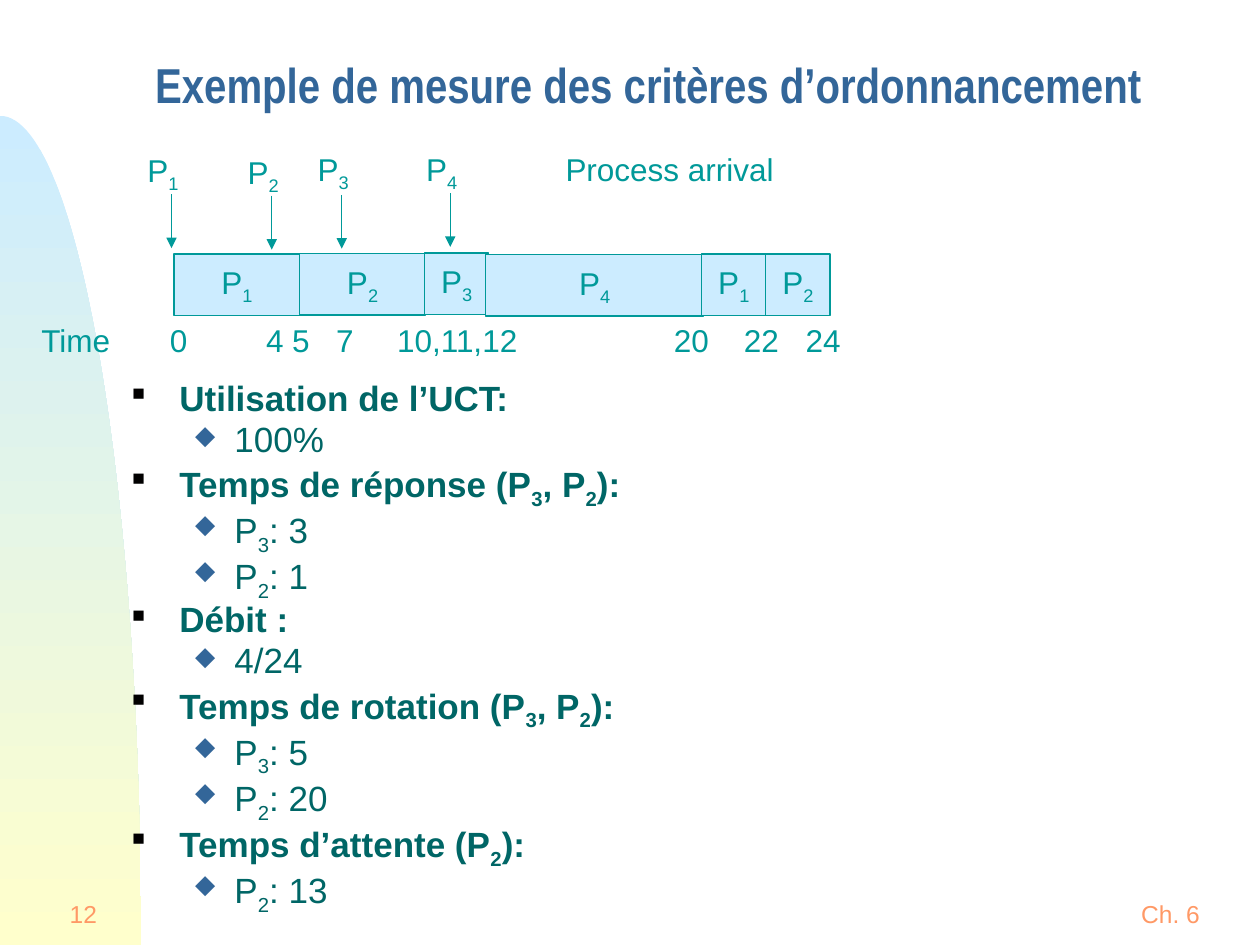
from dataclasses import dataclass

from lxml.etree import SubElement
from pptx import Presentation
from pptx.dml.color import RGBColor
from pptx.enum.shapes import MSO_CONNECTOR, MSO_SHAPE
from pptx.enum.text import MSO_ANCHOR, MSO_AUTO_SIZE, PP_ALIGN
from pptx.oxml.ns import qn
from pptx.util import Pt


@dataclass(frozen=True)
class Theme:
    font: str = "Arial"
    head: str = "Arial Narrow"
    blue: str = "336699"
    teal: str = "009999"
    dark: str = "006666"
    pale: str = "CCECFF"
    cream: str = "FFFFCC"
    coral: str = "FF9966"
    black: str = "010000"
    title: int = 28
    body: int = 20
    label: int = 18
    foot: int = 14


@dataclass(frozen=True)
class Box:
    left: float
    top: float
    width: float
    height: float

    def spot(self) -> tuple:
        return Pt(self.left), Pt(self.top), Pt(self.width), Pt(self.height)


@dataclass(frozen=True)
class Slot:
    """One stretch of processor time in the schedule."""
    name: str
    left: float
    top: float
    width: float


@dataclass(frozen=True)
class Event:
    """A process arrival: its label and the arrow below it."""
    name: str
    mid: float
    top: float
    start: float


@dataclass(frozen=True)
class Level:
    margin: float
    indent: float
    mark: str
    color: str
    scale: int
    bold: bool


T = Theme()
HEAD = Level(27, -27, "■", T.black, 50, True)
ITEM = Level(58.5, -22.5, "◆", T.blue, 75, False)

SLOTS = [
    Slot("P|1|", 99.4, 145.1, 72), Slot("P|2|", 171.2, 144.7, 72),
    Slot("P|3|", 242.6, 144.5, 36.7), Slot("P|4|", 277.6, 145.3, 124.6),
    Slot("P|1|", 401, 145.1, 36.7), Slot("P|2|", 437.6, 145.1, 36.7),
]
EVENTS = [
    Event("P|1|", 98, 82.8, 111), Event("P|2|", 155.3, 83.7, 111.8),
    Event("P|3|", 195.3, 82.3, 111.3), Event("P|4|", 257.3, 82, 110.3),
]
TIMES = {"0": 0, "4": 55, "5": 69.8, "7": 95, "10,11,12": 129.8,
         "20": 288, "22": 328, "24": 363.3}
# An em space sets the lone digit 5 under the units of 20.
LINES = [
    (HEAD, "Utilisation de l’UCT:"), (ITEM, "100%"),
    (HEAD, "Temps de réponse (P|3|, P|2|):"),
    (ITEM, "P|3|: 3"), (ITEM, "P|2|: 1"),
    (HEAD, "Débit :"), (ITEM, "4/24"),
    (HEAD, "Temps de rotation (P|3|, P|2|):"),
    (ITEM, "P|3|: 5"), (ITEM, "P|2|: 20"),
    (HEAD, "Temps d’attente (P|2|):"), (ITEM, "P|2|: 13"),
]


def apply(item, **values) -> None:
    for name, value in values.items():
        setattr(item, name, value)


def write(para, text: str, size: int, color: str, bold=False, font=T.font) -> None:
    """Add text to a paragraph; parts between bars become subscripts."""
    for index, part in enumerate(text.split("|")):
        if not part:
            continue
        run = para.add_run()
        run.text = part
        apply(run.font, name=font, size=Pt(size), bold=bold)
        run.font.color.rgb = RGBColor.from_string(color)
        if index % 2:
            run._r.get_or_add_rPr().set("baseline", "-25000")


def add_text(slide, box: Box, text: str, size=T.label, color=T.teal,
             wrap=False, align=PP_ALIGN.LEFT, anchor=MSO_ANCHOR.TOP):
    frame = slide.shapes.add_textbox(*box.spot()).text_frame
    apply(frame, word_wrap=wrap, vertical_anchor=anchor)
    para = frame.paragraphs[0]
    para.alignment = align
    write(para, text, size, color)
    return para


def add_wave(slide) -> None:
    """Draw the faded curve along the left edge from a sampled Bézier."""
    ends = [(0, 66.2), (44.6, 66.2), (80.6, 278.6), (80.6, 540)]
    dots = []
    for step in range(61):
        t = step / 60
        parts = ((1 - t) ** 3, 3 * t * (1 - t) ** 2, 3 * t * t * (1 - t), t ** 3)
        dots.append(tuple(Pt(sum(w * p[axis] for w, p in zip(parts, ends)))
                          for axis in (0, 1)))
    pen = slide.shapes.build_freeform(*dots[0], scale=1.0)
    pen.add_line_segments(dots[1:] + [(0, Pt(540))], close=True)
    wave = pen.convert_to_shape()
    wave.shadow.inherit = False
    wave.line.fill.background()
    wave.fill.gradient()
    wave.fill.gradient_angle = 270
    for stop, place, color in zip(wave.fill.gradient_stops, (0, 1), (T.pale, T.cream)):
        stop.position = place
        stop.color.rgb = RGBColor.from_string(color)


def add_title(slide, text: str) -> None:
    title = slide.shapes.title
    box = Box(81.4, 25.9, 620.6, 52.6)
    apply(title, **dict(zip(("left", "top", "width", "height"), box.spot())))
    apply(title.text_frame, auto_size=MSO_AUTO_SIZE.NONE, word_wrap=True,
          vertical_anchor=MSO_ANCHOR.MIDDLE)
    para = title.text_frame.paragraphs[0]
    apply(para, alignment=PP_ALIGN.LEFT, line_spacing=0.7)
    write(para, text, T.title, T.blue, True, T.head)


def add_slot(slide, slot: Slot) -> None:
    box = Box(slot.left, slot.top, slot.width, 35.3)
    shape = slide.shapes.add_shape(MSO_SHAPE.RECTANGLE, *box.spot())
    shape.shadow.inherit = False
    shape.fill.solid()
    shape.fill.fore_color.rgb = RGBColor.from_string(T.pale)
    shape.line.color.rgb = RGBColor.from_string(T.teal)
    shape.line.width = Pt(0.75)
    apply(shape.text_frame, word_wrap=False, vertical_anchor=MSO_ANCHOR.MIDDLE)
    para = shape.text_frame.paragraphs[0]
    para.alignment = PP_ALIGN.CENTER
    write(para, slot.name, T.label, T.teal)


def add_event(slide, event: Event) -> None:
    add_text(slide, Box(event.mid - 20.9, event.top, 33.1, 28.8), event.name)
    arrow = slide.shapes.add_connector(
        MSO_CONNECTOR.STRAIGHT, Pt(event.mid), Pt(event.start),
        Pt(event.mid), Pt(event.start + 30.8))
    arrow.line.color.rgb = RGBColor.from_string(T.teal)
    arrow.line.width = Pt(0.75)
    SubElement(arrow.line._get_or_add_ln(), qn("a:tailEnd"), type="triangle")
    SubElement(arrow._element.spPr, qn("a:effectLst"))


def add_times(slide) -> None:
    para = add_text(slide, Box(90, 180, 404.6, 28.8), "\t".join(TIMES), wrap=True)
    tabs = SubElement(para._p.get_or_add_pPr(), qn("a:tabLst"))
    for place in list(TIMES.values())[1:]:
        SubElement(tabs, qn("a:tab"), pos=str(Pt(place)), algn="l")


def add_list(slide) -> None:
    frame = slide.shapes.add_textbox(*Box(68.4, 216, 518.4, 303.8).spot()).text_frame
    frame.word_wrap = True
    for index, (level, text) in enumerate(LINES):
        para = frame.add_paragraph() if index else frame.paragraphs[0]
        apply(para, level=int(level is ITEM), line_spacing=0.8, space_before=Pt(4.5))
        props = para._p.get_or_add_pPr()
        props.set("marL", str(Pt(level.margin)))
        props.set("indent", str(Pt(level.indent)))
        tint = SubElement(props, qn("a:buClr"))
        SubElement(tint, qn("a:srgbClr"), val=level.color)
        SubElement(props, qn("a:buSzPct"), val=str(level.scale * 1000))
        SubElement(props, qn("a:buChar"), char=level.mark)
        write(para, text, T.body, T.dark, level.bold)


def main() -> None:
    deck = Presentation()
    apply(deck, slide_width=Pt(720), slide_height=Pt(540))
    slide = deck.slides.add_slide(deck.slide_layouts[5])
    add_title(slide, "Exemple de mesure des critères d’ordonnancement")
    add_wave(slide)
    for left, width, text, align in (
            (635.8, 66.2, "Ch. 6", PP_ALIGN.CENTER), (12.2, 50.4, "12", PP_ALIGN.RIGHT)):
        add_text(slide, Box(left, 504, width, 36), text, T.foot, T.coral,
                 align=align, anchor=MSO_ANCHOR.MIDDLE)
    add_list(slide)
    for slot in SLOTS:
        add_slot(slide, slot)
    for event in EVENTS:
        add_event(slide, event)
    add_times(slide)
    add_text(slide, Box(16.6, 180, 54.7, 28.8), "Time")
    add_text(slide, Box(316.1, 82.1, 133.9, 28.8), "Process arrival")
    deck.save("out.pptx")


if __name__ == "__main__":
    main()
